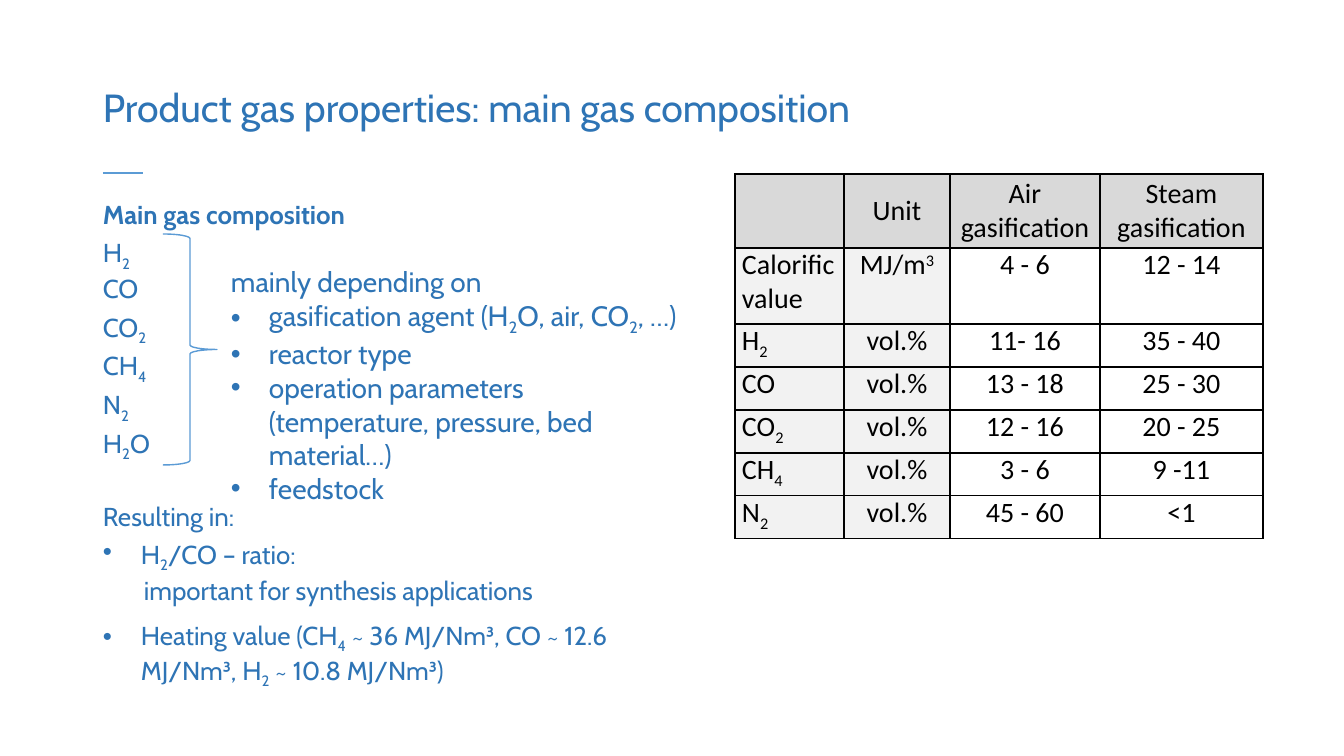
from lxml import etree
from pptx import Presentation
from pptx.dml.color import RGBColor
from pptx.enum.shapes import MSO_CONNECTOR, MSO_SHAPE
from pptx.enum.text import MSO_ANCHOR, PP_ALIGN
from pptx.oxml.ns import qn
from pptx.util import Emu, Pt

STRAIGHT = MSO_CONNECTOR.STRAIGHT
BRACE = MSO_SHAPE.RIGHT_BRACE
TOP, MIDDLE = MSO_ANCHOR.TOP, MSO_ANCHOR.MIDDLE
LEFT, CENTER = PP_ALIGN.LEFT, PP_ALIGN.CENTER

SLIDE_W, SLIDE_H = 1344, 756
SCALE = 12192000 / SLIDE_W
COLORS = {"text": "2E74B5", "line": "5B9BD5", "black": "000000",
          "header": "D9D9D9", "label": "F2F2F2"}
SUB, SUPER = "-25000", "30000"


def px(length):
    return Emu(round(length * SCALE))


def rgb(name):
    return RGBColor.from_string(COLORS[name])


class SlideBuilder:
    """Holds the text style and the current slide."""

    def __init__(self, slide, font="Cabin", color="text"):
        self.slide = slide
        self.font = font
        self.color = color

    def runs(self, paragraph, text, size, bold=False, font=None, color=None):
        """Every second part between bars is a subscript, or with ^ a superscript."""
        for i, part in enumerate(text.split("|")):
            if not part:
                continue
            run = paragraph.add_run()
            run.text = part.lstrip("^")
            run.font.size = Pt(size)
            run.font.name = font or self.font
            run.font.bold = bold
            run.font.color.rgb = rgb(color or self.color)
            if i % 2:
                run.font._element.set("baseline", SUPER if part[0] == "^" else SUB)

    def text(self, box, paragraphs, size, anchor=TOP):
        frame = self.slide.shapes.add_textbox(*map(px, box)).text_frame
        frame.word_wrap = True
        frame.vertical_anchor = anchor
        for i, (content, style) in enumerate(paragraphs):
            paragraph = frame.paragraphs[0] if i == 0 else frame.add_paragraph()
            paragraph.line_spacing = style.get("spacing", 1.0)
            paragraph.space_before = Pt(style.get("before", 0) if i else 0)
            properties = paragraph._p.get_or_add_pPr()
            properties.set("marL", str(px(style.get("indent", 0))))
            if style.get("bullet"):
                properties.set("indent", str(-px(style["indent"])))
                etree.SubElement(properties, qn("a:buFont"), typeface="Arial")
                etree.SubElement(properties, qn("a:buChar"), char="•")
            self.runs(paragraph, content, size, style.get("bold", False))

    def line(self, x1, y1, x2, y2):
        rule = self.slide.shapes.add_connector(STRAIGHT, *map(px, (x1, y1, x2, y2)))
        rule.line.color.rgb = rgb("line")
        rule.line.width = Pt(1)
        etree.SubElement(rule._element.spPr, qn("a:effectLst"))

    def brace(self, box):
        brace = self.slide.shapes.add_shape(BRACE, *map(px, box))
        brace.shadow.inherit = False
        brace.fill.background()
        brace.line.color.rgb = rgb("line")
        brace.line.width = Pt(1)

    def cell(self, cell, content, size, fill, align, anchor):
        cell.margin_left = cell.margin_right = px(7)
        cell.margin_top = cell.margin_bottom = 0
        cell.vertical_anchor = anchor
        properties = cell._tc.get_or_add_tcPr()
        for side in ("lnL", "lnR", "lnT", "lnB"):
            border = etree.SubElement(properties, qn(f"a:{side}"), w=str(Pt(1)))
            solid = etree.SubElement(border, qn("a:solidFill"))
            etree.SubElement(solid, qn("a:srgbClr"), val=COLORS["black"])
        if fill:
            cell.fill.solid()
            cell.fill.fore_color.rgb = rgb(fill)
        else:
            cell.fill.background()
        paragraph = cell.text_frame.paragraphs[0]
        paragraph.alignment = align
        self.runs(paragraph, content, size, font="Calibri", color="black")

    def table(self, x, y, widths, heights, rows, size):
        shape = self.slide.shapes.add_table(
            len(rows), len(widths), px(x), px(y), px(sum(widths)), px(sum(heights)))
        table = shape.table
        table.first_row = table.horz_banding = False
        for column, width in zip(table.columns, widths):
            column.width = px(width)
        for r, (values, height) in enumerate(zip(rows, heights)):
            table.rows[r].height = px(height)
            for c, value in enumerate(values):
                fill = "header" if r == 0 else "label" if c < 2 else None
                self.cell(table.cell(r, c), value, size, fill,
                          CENTER if c else LEFT, MIDDLE if r == 0 else TOP)


def main():
    prs = Presentation()
    prs.slide_width, prs.slide_height = px(SLIDE_W), px(SLIDE_H)
    builder = SlideBuilder(prs.slides.add_slide(prs.slide_layouts[6]))

    # Title and short rule
    builder.line(103, 173, 143, 173)
    builder.text((93, 71, 1159, 78),
                 [("Product gas properties: main gas composition", {"spacing": 0.9})],
                 28, MIDDLE)

    # Gas list and results
    tight = {"spacing": 0.7, "before": 10}
    gases = ["H|2|", "CO", "CO|2|", "CH|4|", "N|2|", "H|2|O"]
    composition = [
        ("Main gas composition", {**tight, "bold": True}),
        *[(gas, tight) for gas in gases],
        ("Resulting in:", {**tight, "before": 36}),
        ("H|2|/CO – ratio:", {**tight, "indent": 38, "bullet": True}),
        ("important for synthesis applications", {**tight, "indent": 41}),
        ("Heating value (CH|4| ~ 36 MJ/Nm³, CO ~ 12.6 MJ/Nm³, H|2| ~ 10.8 MJ/Nm³)",
         {"before": 10, "indent": 38, "bullet": True}),
    ]
    builder.text((93, 202, 572, 480), composition, 18.5)

    # Influencing factors
    builder.brace((163, 234, 54, 231))
    factors = ["gasification agent (H|2|O, air, CO|2|, …)", "reactor type",
               "operation parameters (temperature, pressure, bed material…)",
               "feedstock"]
    builder.text((221, 260, 478, 214),
                 [("mainly depending on", {}),
                  *[(factor, {"indent": 38, "bullet": True}) for factor in factors]],
                 20)

    # Gas composition by gasification agent
    shares = [("11- 16", "35 - 40"), ("13 - 18", "25 - 30"), ("12 - 16", "20 - 25"),
              ("3 - 6", "9 -11"), ("45 - 60", "<1")]
    rows = [
        ("", "Unit", "Air gasification", "Steam gasification"),
        ("Calorific value", "MJ/m|^3|", "4 - 6", "12 - 14"),
        *[(gas, "vol.%", air, steam) for gas, (air, steam) in zip(gases, shares)],
    ]
    builder.table(735, 174, [109, 106, 150, 163], [74, 76] + [43] * len(shares), rows, 20)

    prs.save("out.pptx")


if __name__ == "__main__":
    main()
